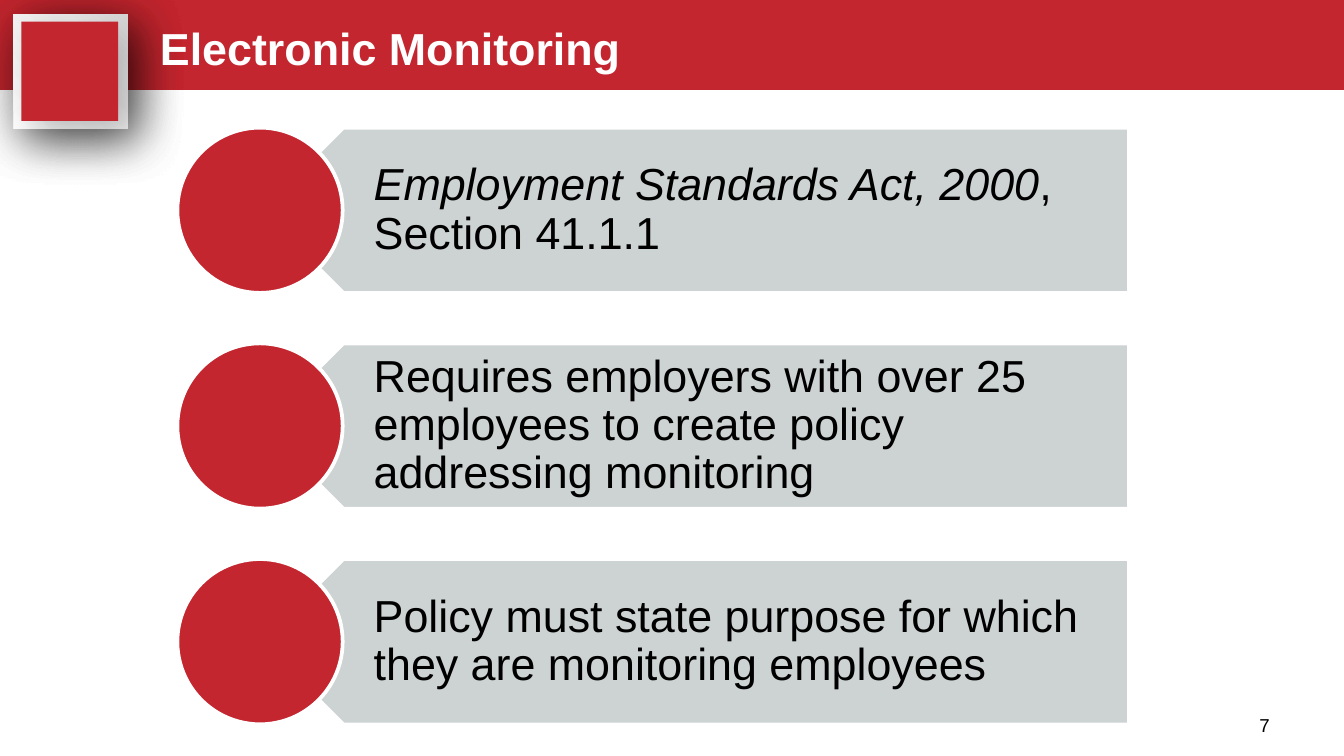
import lxml.etree
import pptx
import pptx.dml.color
import pptx.enum.shapes
import pptx.enum.text
import pptx.oxml.ns
import pptx.util

Inches = pptx.util.Inches
Pt = pptx.util.Pt
RGBColor = pptx.dml.color.RGBColor
SHAPE = pptx.enum.shapes.MSO_SHAPE
qn = pptx.oxml.ns.qn

RED = RGBColor(0xC4, 0x26, 0x2F)
GREY = RGBColor(0xCD, 0xD2, 0xD2)
WHITE = RGBColor(0xFF, 0xFF, 0xFF)
BLACK = RGBColor(0, 0, 0)
FRAME_STOPS = [
    (0, WHITE),
    (73, RGBColor(0xEC, 0xEC, 0xEC)),
    (100, RGBColor(0xD9, 0xD9, 0xD9)),
]

FIRST_ROW_TOP = 0.95
LAST_ROW_TOP = 4.16
ROW_HEIGHT = 1.23
ROWS = [
    [("Employment Standards Act, 2000", True), (", Section 41.1.1", False)],
    [("Requires employers with over 25 employees to create policy "
      "addressing monitoring", False)],
    [("Policy must state purpose for which they are monitoring employees", False)],
]


def add_shape(s, kind, box, fill=None, outline=None, rotation=0):
    sp = s.shapes.add_shape(kind, *map(Inches, box))
    sp.shadow.inherit = False
    sp.rotation = rotation
    if fill is not None:
        sp.fill.solid()
        sp.fill.fore_color.rgb = fill
    if outline is None:
        sp.line.fill.background()
    else:
        sp.line.color.rgb = outline
        sp.line.width = Pt(2)
    return sp


def add_shadow(sp, opacity, blur, distance):
    effects = sp._element.spPr.find(qn("a:effectLst"))
    shadow = lxml.etree.SubElement(
        effects, qn("a:outerShdw"), blurRad=str(Pt(blur)),
        dist=str(Pt(distance)), dir="2700000", algn="tl", rotWithShape="0")
    color = lxml.etree.SubElement(shadow, qn("a:srgbClr"), val=str(BLACK))
    lxml.etree.SubElement(color, qn("a:alpha"), val=str(opacity * 1000))


def set_gradient(sp, stops):
    sp.fill.gradient()
    sp.fill.gradient_angle = 315
    stop_list = sp._element.spPr.find(".//" + qn("a:gsLst"))
    for stop in list(stop_list):
        stop_list.remove(stop)
    for position, rgb in stops:
        stop = lxml.etree.SubElement(stop_list, qn("a:gs"), pos=str(position * 1000))
        lxml.etree.SubElement(stop, qn("a:srgbClr"), val=str(rgb))


def add_text(s, box, runs, size, color, bold=False, spacing=1.0, insets=(0, 0, 0, 0)):
    tf = s.shapes.add_textbox(*map(Inches, box)).text_frame
    tf.word_wrap = True
    tf.vertical_anchor = pptx.enum.text.MSO_ANCHOR.MIDDLE
    tf.margin_left, tf.margin_top, tf.margin_right, tf.margin_bottom = map(Inches, insets)
    p = tf.paragraphs[0]
    p.line_spacing = spacing
    for text, italic in runs:
        r = p.add_run()
        r.text = text
        r.font.name = "Arial"
        r.font.size = Pt(size)
        r.font.bold = bold
        r.font.italic = italic
        r.font.color.rgb = color


def add_header(s):
    add_shape(s, SHAPE.RECTANGLE, (0, 0, 10, 0.67), RED)
    for _ in range(3):
        frame = add_shape(s, SHAPE.RECTANGLE, (0.1, 0.11, 0.85, 0.85), rotation=270)
        set_gradient(frame, FRAME_STOPS)
        add_shadow(frame, 28, 28, 7)
    square = add_shape(s, SHAPE.RECTANGLE, (0.15, 0.17, 0.74, 0.72), RED, rotation=270)
    add_shadow(square, 25, 20, 9)
    add_text(s, (1.19, 0.04, 8.52, 0.59), [("Electronic Monitoring", False)],
             24, WHITE, bold=True, spacing=1.1)


def add_row(s, top, runs):
    add_shape(s, SHAPE.PENTAGON, (1.94, top, 6.46, ROW_HEIGHT), GREY, WHITE, 180)
    add_text(s, (2.24, top, 6.15, ROW_HEIGHT), runs, 24, BLACK,
             spacing=0.9, insets=(0.54, 0.1, 0.19, 0.1))
    add_shape(s, SHAPE.OVAL, (1.32, top, ROW_HEIGHT, ROW_HEIGHT), RED, WHITE)


def main():
    prs = pptx.Presentation()
    prs.slide_width = Inches(10)
    prs.slide_height = prs.slide_width * 9 // 16
    s = prs.slides.add_slide(prs.slide_layouts[6])
    add_header(s)
    add_text(s, (9.37, 5.27, 0.34, 0.25), [("7", False)], 10, BLACK)
    row_step = (LAST_ROW_TOP - FIRST_ROW_TOP) / (len(ROWS) - 1)
    for i, runs in enumerate(ROWS):
        add_row(s, FIRST_ROW_TOP + i * row_step, runs)
    prs.save("out.pptx")


if __name__ == "__main__":
    main()
